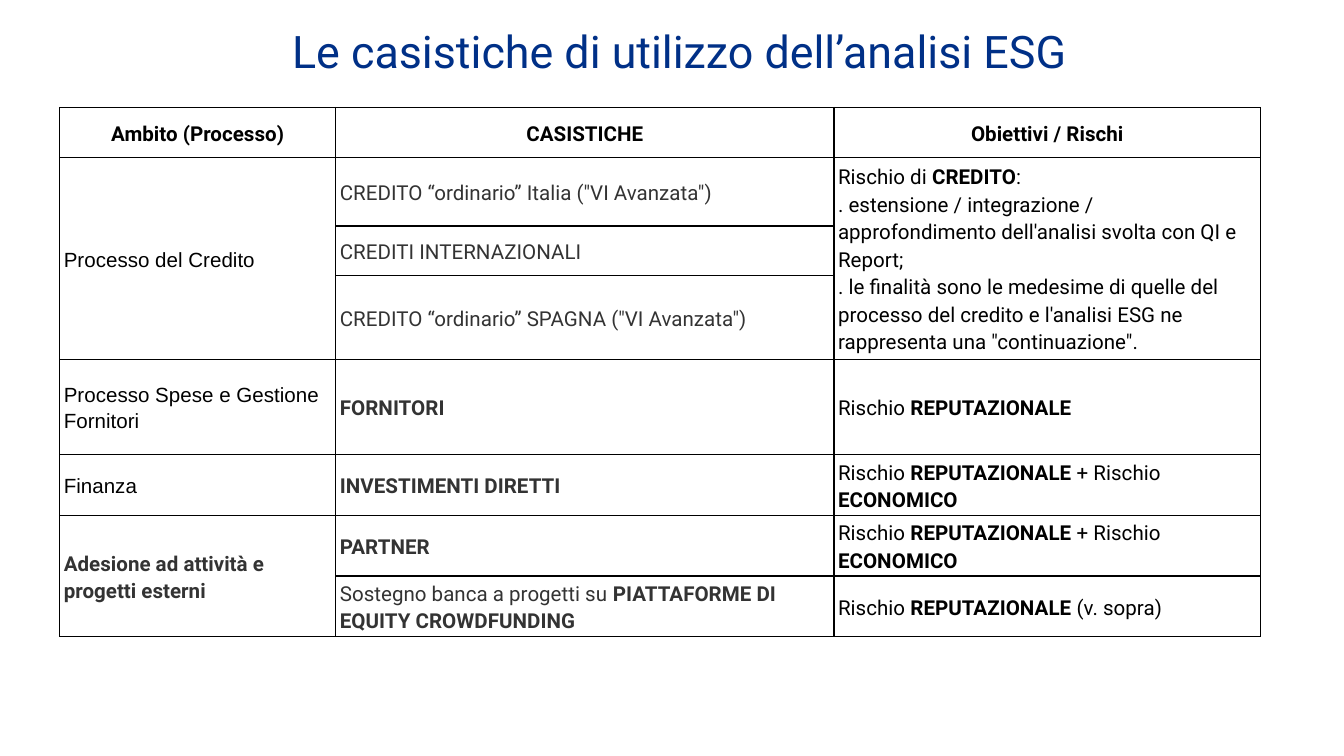
from lxml import etree
from pptx import Presentation
from pptx.dml.color import RGBColor
from pptx.enum.text import MSO_ANCHOR, PP_ALIGN
from pptx.oxml.ns import qn
from pptx.util import Pt

CENTER, LEFT = PP_ALIGN.CENTER, PP_ALIGN.LEFT
MIDDLE = MSO_ANCHOR.MIDDLE
BLACK, GREY, BLUE, WHITE = "000000", "333333", "003087", "FFFFFF"

TITLE = "Le casistiche di utilizzo dell’analisi ESG"
HEADERS = ["Ambito (Processo)", "CASISTICHE", "Obiettivi / Rischi"]
# Text between ** marks is bold; None marks a cell covered by the one above.
ROWS = [
    ("Processo del Credito", 'CREDITO “ordinario” Italia ("VI Avanzata")',
     "Rischio di **CREDITO**:\n"
     ". estensione / integrazione / approfondimento dell'analisi svolta con QI e Report;\n"
     ". le finalità sono le medesime di quelle del processo del credito e l'analisi ESG ne "
     'rappresenta una "continuazione".'),
    (None, "CREDITI INTERNAZIONALI", None),
    (None, 'CREDITO “ordinario” SPAGNA ("VI Avanzata")', None),
    ("Processo Spese e Gestione Fornitori", "**FORNITORI**", "Rischio **REPUTAZIONALE**"),
    ("Finanza", "**INVESTIMENTI DIRETTI**",
     "Rischio **REPUTAZIONALE **+ Rischio **ECONOMICO**"),
    ("**Adesione ad attività e progetti esterni**", "**PARTNER**",
     "Rischio **REPUTAZIONALE **+ Rischio **ECONOMICO**"),
    (None, "Sostegno banca a progetti su **PIATTAFORME DI EQUITY CROWDFUNDING**",
     "Rischio **REPUTAZIONALE **(v. sopra)"),
]
COLUMN_WIDTHS = [147.9, 266.9, 228.6]
ROW_HEIGHTS = [26.6, 36.9, 26.6, 26.6, 51, 26.6, 26.6, 26.6]
TABLE_LEFT, TABLE_TOP = 32, 57.6


def rgb(value):
    return RGBColor.from_string(value)


def set_font(para, name, size, color):
    para.font.name = name
    para.font.size = Pt(size)
    para.font.color.rgb = rgb(color)


def set_margins(target, side, end):
    target.margin_left = target.margin_right = Pt(side)
    target.margin_top = target.margin_bottom = Pt(end)


def write_cell(cell, text, align, name, color):
    for index, line in enumerate(text.split("\n")):
        frame = cell.text_frame
        para = frame.add_paragraph() if index else frame.paragraphs[0]
        para.alignment, para.line_spacing = align, 1.15
        set_font(para, name, 11, color)
        for position, part in enumerate(line.split("**")):
            if part:
                span = para.add_run()
                span.text = part
                span.font.bold = position % 2 == 1


def add_borders(cell):
    properties = cell._tc.get_or_add_tcPr()
    for edge in ("a:lnL", "a:lnR", "a:lnT", "a:lnB"):
        line = etree.SubElement(properties, qn(edge), w=str(Pt(0.75)))
        fill = etree.SubElement(line, qn("a:solidFill"))
        etree.SubElement(fill, qn("a:srgbClr"), val=BLACK)


def cell_style(row, column, text):
    """Return the alignment, font and colour of a cell."""
    if row == 0:
        return CENTER, "Roboto", BLACK
    if column == 0 and not text.startswith("**"):
        return LEFT, "Arial", BLACK
    return LEFT, "Roboto", BLACK if column == 2 else GREY


deck = Presentation()
deck.slide_width, deck.slide_height = Pt(720), Pt(405)
page = deck.slides.add_slide(deck.slide_layouts[6])

box = page.shapes.add_textbox(Pt(97.9), Pt(9.8), Pt(532), Pt(34.6))
box.text_frame.word_wrap = True
set_margins(box.text_frame, 2.9, 2.9)
heading = box.text_frame.paragraphs[0]
heading.text = TITLE
heading.alignment = CENTER
set_font(heading, "Roboto", 24, BLUE)

grid = [[f"**{header}**" for header in HEADERS], *ROWS]
table = page.shapes.add_table(
    len(grid), len(HEADERS), Pt(TABLE_LEFT), Pt(TABLE_TOP),
    Pt(sum(COLUMN_WIDTHS)), Pt(sum(ROW_HEIGHTS))).table
table.first_row = table.horz_banding = False
for column, width in zip(table.columns, COLUMN_WIDTHS):
    column.width = Pt(width)
for row, height in zip(table.rows, ROW_HEIGHTS):
    row.height = Pt(height)

for r, texts in enumerate(grid):
    for c, text in enumerate(texts):
        cell = table.cell(r, c)
        add_borders(cell)
        set_margins(cell, 2.2, 1.1)
        cell.vertical_anchor = MIDDLE
        if c == 2 and r > 0:
            cell.fill.solid()
            cell.fill.fore_color.rgb = rgb(WHITE)
        else:
            cell.fill.background()
        if text is not None:
            write_cell(cell, text, *cell_style(r, c, text))

for c in range(len(HEADERS)):
    starts = [r for r, texts in enumerate(grid) if texts[c] is not None]
    for start, following in zip(starts, starts[1:] + [len(grid)]):
        if following - start > 1:
            table.cell(start, c).merge(table.cell(following - 1, c))

deck.save("out.pptx")
